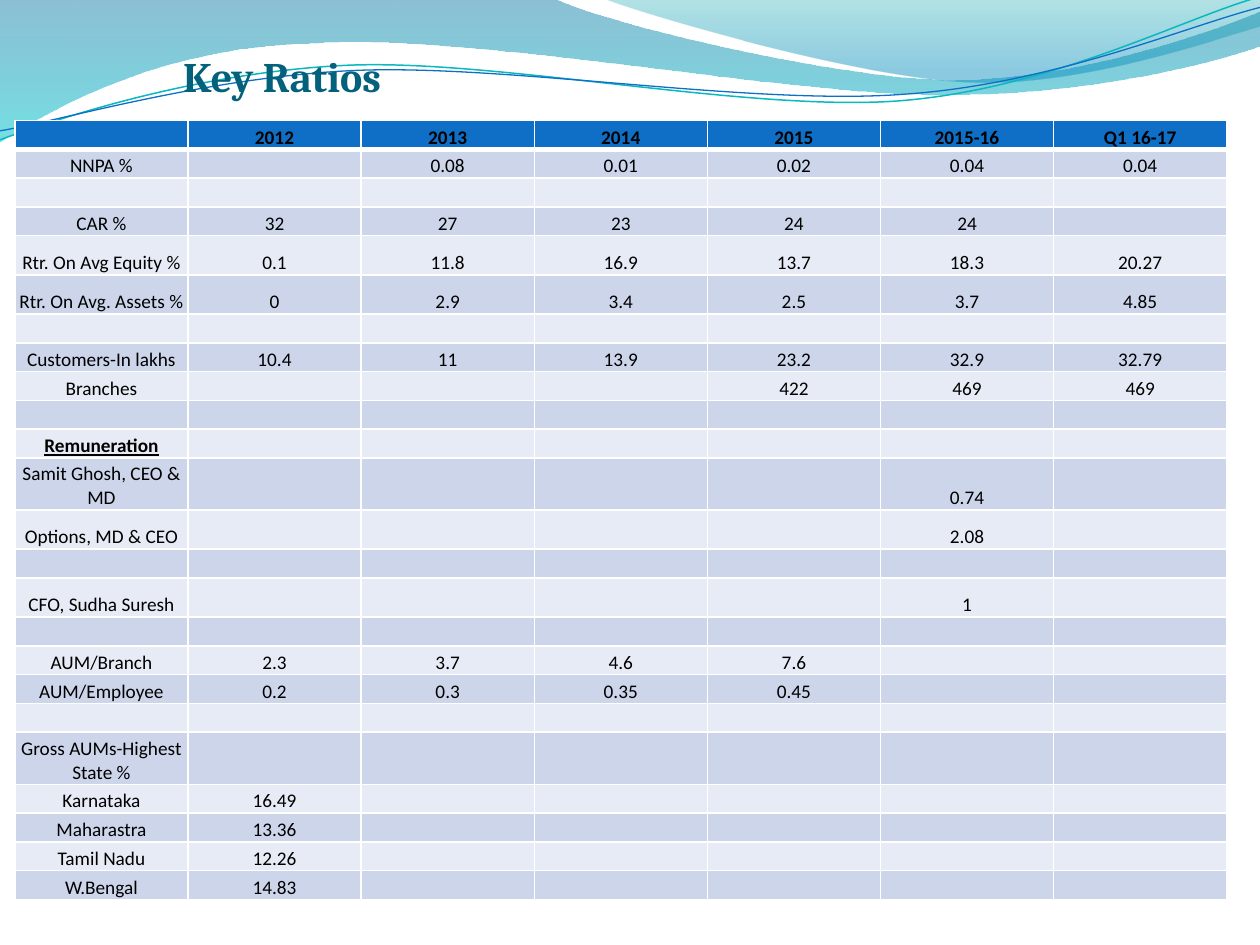
from dataclasses import dataclass

from lxml import etree
from pptx import Presentation
from pptx.dml.color import RGBColor
from pptx.enum.text import MSO_ANCHOR, MSO_AUTO_SIZE, PP_ALIGN
from pptx.oxml.ns import qn
from pptx.util import Cm, Pt

TOP, BOTTOM = MSO_ANCHOR.TOP, MSO_ANCHOR.BOTTOM
CENTER = PP_ALIGN.CENTER
NO_FIT = MSO_AUTO_SIZE.NONE

COLORS = {
    "title": "04617B", "text": "000000", "border": "FFFFFF",
    "header": "0F6FC6", "band_dark": "CCD5EA", "band_light": "E7EBF5",
    "wave_blue": "0074A1", "wave_cyan": "00C6CF",
    "corner_teal": "00A1A9", "corner_blue": "008BBF",
    "line_teal": "0AB8BF", "line_blue": "0F6FC6",
}
TABLE_SIZE = 11
THIN, THICK = 1, 3


@dataclass
class Stop:
    position: float
    color: str
    opacity: int


@dataclass
class Wave:
    """Outline in cm: each segment is a line (x, y) or a Bezier (three points)."""
    start: tuple
    segments: list
    stops: tuple = ()
    line: str = ""
    width: float = 0
    rotation: float = 0


@dataclass
class Row:
    label: str
    values: tuple = ()
    height: float = 0.58
    heading: bool = False


WAVES = [
    Wave((0, 0), [
        (11.18, -0.03),
        (12.09, 0.43, 16.87, 1.6, 19.25, 1.6),
        (21.67, 1.6, 24.33, 0.66, 25.4, 0.23),
        (25.43, 0.91),
        (24.97, 1.12, 22.1, 1.93, 18.95, 1.91),
        (15.8, 1.91, 9.7, 0.71, 6.53, 0.86),
        (3.28, 0.91, 1.17, 2.11, -0.03, 2.87),
        (0, 0),
    ], stops=(Stop(0, "wave_blue", 45), Stop(1, "wave_cyan", 55))),
    Wave((12.17, -0.03), [
        (12.93, 0.28, 17.32, 1.57, 19.53, 1.65),
        (21.74, 1.75, 24.41, 0.81, 25.4, 0.53),
        (25.4, 0),
        (12.17, -0.03),
    ], stops=(Stop(0, "corner_teal", 30), Stop(0.8, "corner_blue", 45))),
    Wave((-0.05, 2.22), [
        (1.19, 1.83, 4.01, 1.04, 7.05, 1.05),
        (10.06, 1.07, 15.01, 2.37, 18.08, 2.29),
        (21.13, 2.2, 23.86, 0.91, 25.4, 0.55),
    ], line="line_teal", width=0.85, rotation=357.3),
    Wave((-0.05, 2.04), [
        (1.17, 1.9, 4.17, 1.15, 7.19, 1.16),
        (10.25, 1.18, 15.14, 2.25, 18.19, 2.16),
        (21.21, 2.1, 23.93, 1.06, 25.45, 0.75),
    ], line="line_blue", width=0.75, rotation=357.3),
]

TALL, DOUBLE = 0.79, 1.05
ROWS = [
    Row("", ("2012", "2013", "2014", "2015", "2015-16", "Q1 16-17")),
    Row("NNPA %", ("", "0.08", "0.01", "0.02", "0.04", "0.04")),
    Row(""),
    Row("CAR %", ("32", "27", "23", "24", "24")),
    Row("Rtr. On Avg Equity %", ("0.1", "11.8", "16.9", "13.7", "18.3", "20.27"), TALL),
    Row("Rtr. On Avg. Assets %", ("0", "2.9", "3.4", "2.5", "3.7", "4.85"), TALL),
    Row(""),
    Row("Customers-In lakhs", ("10.4", "11", "13.9", "23.2", "32.9", "32.79")),
    Row("Branches", ("", "", "", "422", "469", "469")),
    Row(""),
    Row("Remuneration", heading=True),
    Row("Samit Ghosh, CEO & MD", ("", "", "", "", "0.74"), DOUBLE),
    Row("Options, MD & CEO", ("", "", "", "", "2.08"), TALL),
    Row(""),
    Row("CFO, Sudha Suresh", ("", "", "", "", "1"), TALL),
    Row(""),
    Row("AUM/Branch", ("2.3", "3.7", "4.6", "7.6")),
    Row("AUM/Employee", ("0.2", "0.3", "0.35", "0.45")),
    Row(""),
    Row("Gross AUMs-Highest State %", height=DOUBLE),
    Row("Karnataka", ("16.49",)),
    Row("Maharastra", ("13.36",)),
    Row("Tamil Nadu", ("12.26",)),
    Row("W.Bengal", ("14.83",)),
]
COLUMNS, COLUMN_WIDTH = 7, 3.49


def rgb(name: str) -> RGBColor:
    return RGBColor.from_string(COLORS[name])


def add_text(tf, text: str, *, size: float, font: str = "Calibri",
             color: str = "text", bold: bool = False, underline: bool = False) -> None:
    p = tf.paragraphs[0]
    p.alignment = CENTER
    if not text:
        # An empty cell needs its size on the paragraph end to keep the row low
        p._p.get_or_add_endParaRPr().set("sz", str(size * 100))
        return
    r = p.add_run()
    r.text = text
    r.font.name, r.font.size = font, Pt(size)
    r.font.bold, r.font.underline = bold, underline
    r.font.color.rgb = rgb(color)


def bend(sp, segments: list) -> None:
    """Join the three straight pieces of each Bezier segment into one curve."""
    pieces = iter(list(sp._element.iter(qn("a:lnTo"))))
    for segment in segments:
        first = next(pieces)
        if len(segment) == 6:
            first.tag = qn("a:cubicBezTo")
            for _ in range(2):
                piece = next(pieces)
                first.append(piece[0])
                piece.getparent().remove(piece)


def draw_wave(slide, wave: Wave) -> None:
    points = [(Cm(s[i]), Cm(s[i + 1])) for s in wave.segments for i in range(0, len(s), 2)]
    builder = slide.shapes.build_freeform(Cm(wave.start[0]), Cm(wave.start[1]))
    builder.add_line_segments(points, close=bool(wave.stops))
    sp = builder.convert_to_shape()
    # Changing the tag makes a new element class, so the outline is bent first
    bend(sp, wave.segments)
    sp.rotation = wave.rotation
    sp.shadow.inherit = False
    if wave.line:
        sp.fill.background()
        sp.line.color.rgb = rgb(wave.line)
        sp.line.width = Pt(wave.width)
        return
    sp.line.fill.background()
    sp.fill.gradient()
    sp.fill.gradient_angle = 270
    for gradient_stop, stop in zip(sp.fill.gradient_stops, wave.stops):
        gradient_stop.position = stop.position
        gradient_stop.color.rgb = rgb(stop.color)
    for clr, stop in zip(sp._element.spPr.iter(qn("a:srgbClr")), wave.stops):
        etree.SubElement(clr, qn("a:alpha")).set("val", str(stop.opacity * 1000))


def draw_title(slide, text: str) -> None:
    title = slide.shapes.title
    title.left, title.top, title.width, title.height = Cm(0.07), Cm(1.02), Cm(11.23), Cm(1.83)
    tf = title.text_frame
    tf.auto_size, tf.vertical_anchor = NO_FIT, TOP
    tf.margin_top = tf.margin_bottom = 0
    tf.margin_left = tf.margin_right = Cm(0.13)
    add_text(tf, text, size=24, font="Cambria", color="title", bold=True)
    slide.shapes._spTree.append(title._element)  # in front of the waves


def set_borders(cell, top: float, bottom: float) -> None:
    widths = {"a:lnL": THIN, "a:lnR": THIN, "a:lnT": top, "a:lnB": bottom}
    for i, (tag, width) in enumerate(widths.items()):
        ln = etree.Element(qn(tag), w=str(Pt(width)))
        fill = etree.SubElement(ln, qn("a:solidFill"))
        etree.SubElement(fill, qn("a:srgbClr"), val=COLORS["border"])
        cell._tc.get_or_add_tcPr().insert(i, ln)


def draw_table(slide, rows: list) -> None:
    table = slide.shapes.add_table(len(rows), COLUMNS, Cm(0.3), Cm(2.43),
                                   Cm(COLUMNS * COLUMN_WIDTH),
                                   Cm(sum(row.height for row in rows))).table
    for column in table.columns:
        column.width = Cm(COLUMN_WIDTH)
    for i, row in enumerate(rows):
        table.rows[i].height = Cm(row.height)
        fill = "header" if i == 0 else ("band_light", "band_dark")[i % 2]
        texts = (row.label, *row.values)
        for j in range(COLUMNS):
            cell = table.cell(i, j)
            cell.fill.solid()
            cell.fill.fore_color.rgb = rgb(fill)
            cell.vertical_anchor = BOTTOM
            cell.margin_left = cell.margin_right = cell.margin_top = Cm(0.02)
            cell.margin_bottom = 0
            set_borders(cell, THICK if i == 1 else THIN, THICK if i == 0 else THIN)
            add_text(cell.text_frame, texts[j] if j < len(texts) else "",
                     size=TABLE_SIZE, bold=i == 0 or row.heading, underline=row.heading)


prs = Presentation()
prs.slide_width, prs.slide_height = Cm(25.4), Cm(19.05)
slide = prs.slides.add_slide(prs.slide_layouts[5])
for wave in WAVES:
    draw_wave(slide, wave)
draw_title(slide, "Key Ratios")
draw_table(slide, ROWS)
prs.save("out.pptx")
